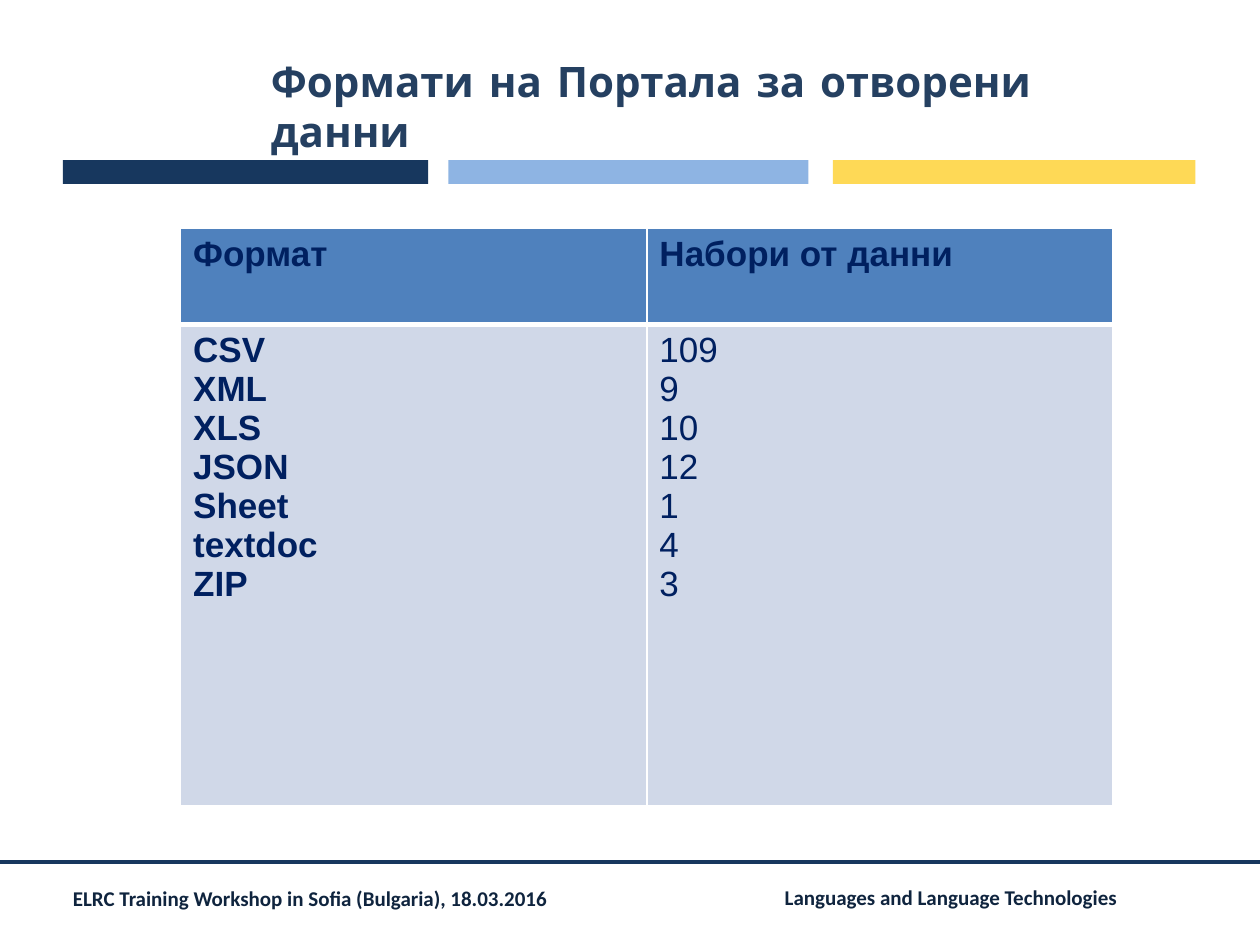
from pptx import Presentation
from pptx.dml.color import RGBColor
from pptx.enum import shapes, text
from pptx.oxml import ns, xmlchemy
from pptx.util import Cm, Pt
from lxml import etree

NAVY = RGBColor(0x17, 0x37, 0x5E)
SKY = RGBColor(0x8E, 0xB4, 0xE3)
YELLOW = RGBColor(0xFE, 0xD9, 0x56)
FOOTER_INK = RGBColor(0x0F, 0x24, 0x3E)
TITLE_INK = RGBColor(0x25, 0x40, 0x61)
TABLE_INK = RGBColor(0x00, 0x20, 0x60)
HEADER_FILL = RGBColor(0x4F, 0x81, 0xBD)
BODY_FILL = RGBColor(0xD0, 0xD8, 0xE8)

HEADINGS = ("Формат", "Набори от данни")
DATA_SETS = (("CSV", 109), ("XML", 9), ("XLS", 10), ("JSON", 12),
             ("Sheet", 1), ("textdoc", 4), ("ZIP", 3))


def style(font, name, size, color, bold=True):
    font.name, font.size, font.bold = name, Pt(size), bold
    font.color.rgb = color


def add_bar(page, left, width, color):
    bar = page.shapes.add_shape(shapes.MSO_SHAPE.RECTANGLE,
                                Cm(left), Cm(3.23), Cm(width), Cm(0.48))
    bar.shadow.inherit = False
    bar.fill.solid()
    bar.fill.fore_color.rgb = color
    bar.line.fill.background()


def add_text(page, place, wording, name, size, color):
    box = page.shapes.add_textbox(*map(Cm, place))
    frame = box.text_frame
    frame.text = wording
    frame.word_wrap = True
    frame.auto_size = text.MSO_AUTO_SIZE.SHAPE_TO_FIT_TEXT
    style(frame.paragraphs[0].runs[0].font, name, size, color)
    return frame


def add_footer_text(page, left, top, width, wording):
    frame = add_text(page, (left, top, width, 0.67), wording, "Calibri", 12, FOOTER_INK)
    frame.margin_left = frame.margin_right = Cm(0.2)
    frame.margin_top = frame.margin_bottom = Cm(0.1)
    frame.paragraphs[0].line_spacing = 0.9


def add_footer_rule(page):
    rule = page.shapes.add_connector(shapes.MSO_CONNECTOR.STRAIGHT,
                                     Cm(0), Cm(17.37), Cm(25.4), Cm(17.37))
    rule.line.color.rgb = NAVY
    rule.line.width = Pt(2.25)
    etree.SubElement(rule._element.spPr, ns.qn("a:effectLst"))


def set_borders(cell, widths):
    """Draw white cell borders; widths maps a side (L, R, T, B) to points."""
    properties = cell._tc.get_or_add_tcPr()
    for position, (side, width) in enumerate(widths.items()):
        border = xmlchemy.OxmlElement(f"a:ln{side}")
        border.set("w", str(Pt(width)))
        fill = etree.SubElement(border, ns.qn("a:solidFill"))
        etree.SubElement(fill, ns.qn("a:srgbClr"), val="FFFFFF")
        properties.insert(position, border)


def fill_cell(cell, lines, fill, bold, top, bottom):
    cell.text_frame.text = "\n".join(map(str, lines))
    for paragraph in cell.text_frame.paragraphs:
        style(paragraph.runs[0].font, "Arial", 20, TABLE_INK, bold)
    cell.fill.solid()
    cell.fill.fore_color.rgb = fill
    set_borders(cell, {"L": 1, "R": 1, "T": top, "B": bottom})


def add_format_table(page):
    heights = (Cm(1.93), Cm(9.7))
    table = page.shapes.add_table(2, 2, Cm(3.64), Cm(4.61), Cm(18.8), sum(heights)).table
    for row, height in zip(table.rows, heights):
        row.height = height
    for column, (heading, values) in enumerate(zip(HEADINGS, zip(*DATA_SETS))):
        fill_cell(table.cell(0, column), [heading], HEADER_FILL, True, top=1, bottom=3)
        fill_cell(table.cell(1, column), values, BODY_FILL, column == 0, top=3, bottom=1)


def main():
    deck = Presentation()
    deck.slide_width, deck.slide_height = Cm(25.4), Cm(19.05)
    page = deck.slides.add_slide(deck.slide_layouts[6])
    for left, width, color in ((1.27, 7.36, NAVY), (9.04, 7.26, SKY), (16.79, 7.31, YELLOW)):
        add_bar(page, left, width, color)
    add_footer_text(page, 1.27, 17.8, 12, "ELRC Training Workshop in Sofia (Bulgaria), 18.03.2016")
    add_footer_rule(page)
    add_footer_text(page, 15.62, 17.78, 7.5, "Languages and Language Technologies")
    add_format_table(page)
    add_text(page, (5.21, 0.99, 18.54, 1.27), "Формати на Портала за отворени данни",
             "Comic Neue", 24, TITLE_INK)
    deck.save("out.pptx")


if __name__ == "__main__":
    main()
